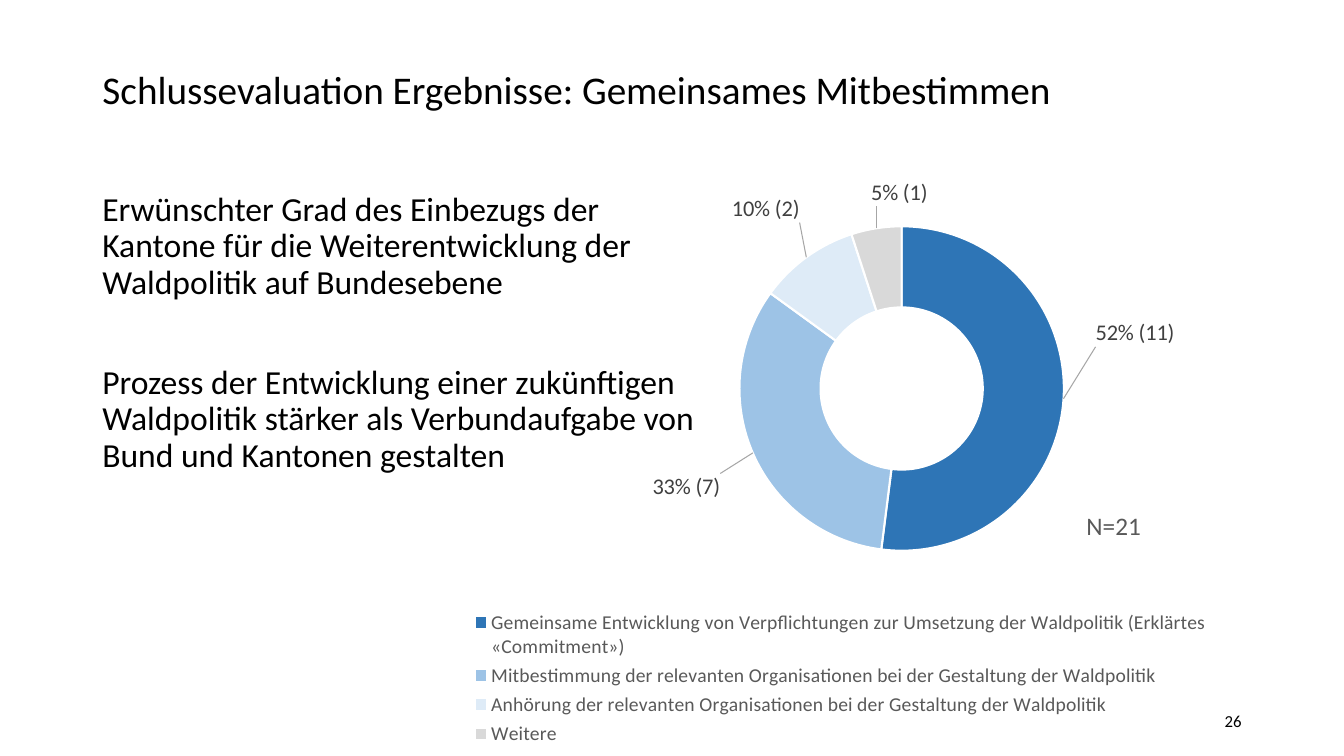
from lxml import etree
from pptx import Presentation
from pptx import util as u
from pptx.chart.data import CategoryChartData
from pptx.dml.color import RGBColor
from pptx.enum import chart as ch, text as tx
from pptx.oxml import parse_xml
from pptx.oxml.ns import nsdecls, qn

Pt = u.Pt
HUES = {"black": "000000", "grey": "595959", "label": "404040", "white": "FFFFFF",
        "commit": "2E75B6", "decide": "9DC3E6", "hear": "DEEBF7", "other": "D9D9D9",
        "lead": "A6A6A6"}
# Category, share, label, colour, label shift in points
SLICES = [
    ("Gemeinsame Entwicklung von Verpflichtungen zur Umsetzung der Waldpolitik "
     "(Erklärtes «Commitment»)", 0.52, "52% (11)", "commit", (80, -45)),
    ("Mitbestimmung der relevanten Organisationen bei der Gestaltung der Waldpolitik",
     0.33, "33% (7)", "decide", (-74, 36)),
    ("Anhörung der relevanten Organisationen bei der Gestaltung der Waldpolitik",
     0.1, "10% (2)", "hear", (-46, -58)),
    ("Weitere", 0.05, "5% (1)", "other", (12, -54)),
]


class Deck:
    """Holds the style and the current slide."""

    face = "Calibri"

    def __init__(self, wide, high):
        self.prs = Presentation()
        self.prs.slide_width, self.prs.slide_height = Pt(wide), Pt(high)
        self.slide = self.prs.slides.add_slide(self.prs.slide_layouts[5])

    def hue(self, name):
        return RGBColor.from_string(HUES[name])

    def font(self, font, size, hue):
        font.name, font.size = self.face, Pt(size)
        font.color.rgb = self.hue(hue)

    def fill(self, frame, lines, size, hue, side=tx.PP_ALIGN.LEFT,
             mid=False, lead=None, gap=0):
        frame.word_wrap = True
        frame.auto_size = tx.MSO_AUTO_SIZE.NONE
        frame.vertical_anchor = tx.MSO_ANCHOR.MIDDLE if mid else tx.MSO_ANCHOR.TOP
        for i, line in enumerate(lines):
            para = frame.add_paragraph() if i else frame.paragraphs[0]
            para.text, para.alignment = line, side
            para.line_spacing = lead
            para.space_before = Pt(gap if i else 0)
            self.font(para.font, size, hue)

    def title(self, box, line, size, foot):
        head = self.slide.shapes.title
        head.left, head.top, head.width, head.height = map(Pt, box)
        self.fill(head.text_frame, [line], size, "black", mid=True, lead=0.9)
        head.text_frame.margin_bottom = Pt(foot)

    def text(self, box, lines, size, hue, **style):
        shape = self.slide.shapes.add_textbox(*map(Pt, box))
        self.fill(shape.text_frame, lines, size, hue, **style)

    def place(self, node, at, vals, inner=False, edge=False):
        """Give a chart part a manual layout of x, y and perhaps w, h."""
        for old in node.findall(qn("c:layout")):
            node.remove(old)
        lay = parse_xml(f"<c:layout {nsdecls('c')}><c:manualLayout/></c:layout>")
        pairs = [("layoutTarget", "inner")] if inner else []
        if edge:
            pairs += [("xMode", "edge"), ("yMode", "edge")]
        pairs += [(key, f"{val:.4f}") for key, val in zip("xywh", vals)]
        for key, val in pairs:
            etree.SubElement(lay[0], qn(f"c:{key}")).set("val", val)
        node.insert(at, lay)

    def ring(self, box, slices, plot, key):
        data = CategoryChartData(number_format="0%")
        data.categories = [row[0] for row in slices]
        data.add_series("Series 1", [row[1] for row in slices])
        chart = self.slide.shapes.add_chart(
            ch.XL_CHART_TYPE.DOUGHNUT, *map(Pt, box), data).chart
        self.font(chart.font, 10, "black")
        chart.has_title = False
        self.place(chart._chartSpace.chart.plotArea, 0, plot, inner=True, edge=True)

        # Legend
        chart.has_legend = True
        chart.legend.position = ch.XL_LEGEND_POSITION.BOTTOM
        chart.legend.include_in_layout = False
        self.font(chart.legend.font, 14, "grey")
        self.place(chart.legend._element, 1, key, edge=True)

        # Labels with leader lines
        chart.plots[0].vary_by_categories = True
        series = chart.plots[0].series[0]
        marks = series.data_labels
        marks.show_value = True
        marks.number_format, marks.number_format_is_linked = "0%", False
        self.font(marks.font, 16, "label")
        marks._element.append(parse_xml(
            f"<c:leaderLines {nsdecls('c', 'a')}><c:spPr><a:ln w='9525'><a:solidFill>"
            f"<a:srgbClr val='{HUES['lead']}'/></a:solidFill></a:ln></c:spPr>"
            "</c:leaderLines>"))

        # Slices
        for i, (_, _, label, hue, (dx, dy)) in enumerate(slices):
            point = series.points[i]
            point.format.fill.solid()
            point.format.fill.fore_color.rgb = self.hue(hue)
            point.format.line.color.rgb = self.hue("white")
            point.format.line.width = Pt(1.5)
            para = point.data_label.text_frame.paragraphs[0]
            run = para.add_run()
            run.text = label
            self.font(run.font, 16, "label")
            node = next(d for d in marks._element.findall(qn("c:dLbl"))
                        if d.find(qn("c:idx")).get("val") == str(i))
            self.place(node, 1, (dx / box[2], dy / box[3]))


def main():
    deck = Deck(960, 540)
    # Heading and statements
    deck.title((66, 28.8, 828, 104.4),
               "Schlussevaluation Ergebnisse: Gemeinsames Mitbestimmen", 28, 34.4)
    deck.text((66, 133.9, 442, 216.7), [
        "Erwünschter Grad des Einbezugs der Kantone für die Weiterentwicklung "
        "der Waldpolitik auf Bundesebene",
        "Prozess der Entwicklung einer zukünftigen Waldpolitik stärker als "
        "Verbundaufgabe von Bund und Kantonen gestalten",
    ], 24, "black", lead=0.9, gap=46)
    # Ring chart and sample size
    deck.text((769, 360.7, 100, 29), ["N=21"], 18, "grey")
    deck.ring((234, 122.4, 725.8, 417.6), SLICES,
              (0.306, 0.094, 0.518, 0.555), (0.135, 0.742, 0.74, 0.25))
    # Page number
    deck.text((678, 500.5, 216, 28.8), ["26"], 12, "black",
              side=tx.PP_ALIGN.RIGHT, mid=True)
    deck.prs.save("out.pptx")


if __name__ == "__main__":
    main()
